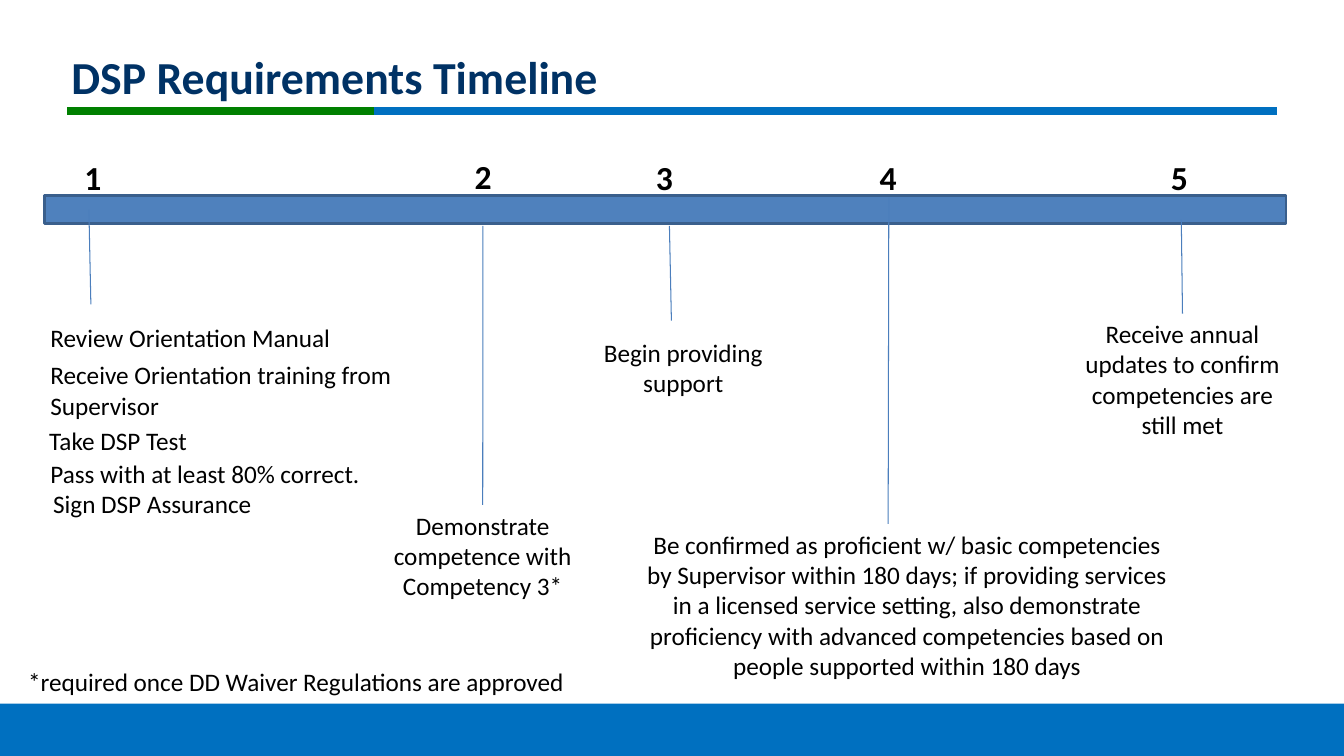
"""Build the DSP Requirements Timeline slide."""
from dataclasses import dataclass

from lxml.etree import SubElement
from pptx import Presentation
from pptx.dml.color import RGBColor
from pptx.enum.shapes import MSO_CONNECTOR, MSO_SHAPE
from pptx.enum.text import MSO_ANCHOR, PP_ALIGN
from pptx.oxml.ns import qn
from pptx.util import Cm, Pt


@dataclass(frozen=True)
class Theme:
    font: str = "Calibri"
    title: str = "003265"
    text: str = "000000"
    paper: str = "FFFFFF"
    blue: str = "0070C0"
    green: str = "008000"
    bar: str = "4F81BD"
    bar_edge: str = "3A5F8C"
    drop: str = "4B7EBC"
    title_size: float = 32.7
    number_size: float = 24
    body_size: float = 18
    rule_width: float = 6
    edge_width: float = 2
    drop_width: float = 0.75


THEME = Theme()
SLIDE_WIDTH, SLIDE_HEIGHT = 33.87, 19.05
FOOTER_HEIGHT = 1.32
LINE_HEIGHT, BOX_PADDING = 0.77, 0.25

TITLE = "DSP Requirements Timeline"
TITLE_BOX = (1.8, 1.22, 25.65, 1.4)
RULE_TOP = 2.79
RULES = [(1.7, 9.8, THEME.green), (9.42, 32.18, THEME.blue)]
BAR_BOX = (1.12, 4.93, 31.29, 0.71)

# (number left, number top, drop start, drop end)
MILESTONES = [
    (1.88, 3.84, (2.24, 5.28), (2.29, 7.67)),
    (11.71, 3.81, (12.17, 5.69), (12.22, 12.78)),
    (16.28, 3.84, (16.87, 5.69), (16.92, 8.08)),
    (21.92, 3.84, (22.4, 4.98), (22.38, 14.3)),
    (29.26, 3.84, (29.77, 5.54), (29.82, 7.92)),
]

LEFT_NOTES = [
    (1.02, 8.0, 7.65, ["Review Orientation Manual"]),
    (1.02, 8.94, 9.35, ["Receive Orientation training from", "Supervisor"]),
    (0.99, 10.59, 4.17, ["Take DSP Test"]),
    (1.02, 11.43, 8.38, ["Pass with at least 80% correct."]),
    (1.09, 12.19, 5.56, ["Sign DSP Assurance"]),
    (0.46, 16.66, 14.2, ["*required once DD Waiver Regulations are approved"]),
]

CENTRED_NOTES = [
    (2, (8.84, 12.73, 6.65, 2.57), THEME.paper, True,
     ["Demonstrate competence with Competency 3*"]),
    (4, (15.9, 13.21, 13.92, 4.11), THEME.paper, False,
     ["Be confirmed as proficient w/ basic competencies",
      "by Supervisor within 180 days; if providing services in a licensed "
      "service setting, also demonstrate proficiency with advanced "
      "competencies based on people supported within 180 days"]),
    (3, (14.45, 8.38, 5.54, 1.8), None, False, ["Begin providing support"]),
    (5, (27.03, 7.9, 5.54, 3.33), None, True,
     ["Receive annual updates to confirm competencies are still met"]),
]


def color(value):
    """Turn a hex string into a colour."""
    return RGBColor.from_string(value)


def add_bar(slide, box, fill, edge=None):
    """Add a filled rectangle with an optional outline."""
    shape = slide.shapes.add_shape(MSO_SHAPE.RECTANGLE, *map(Cm, box))
    shape.shadow.inherit = False
    shape.fill.solid()
    shape.fill.fore_color.rgb = color(fill)
    if edge:
        shape.line.color.rgb = color(edge)
        shape.line.width = Pt(THEME.edge_width)
    else:
        shape.line.fill.background()
    return shape


def add_line(slide, start, end, line_color, width):
    """Add a straight line without a shadow."""
    line = slide.shapes.add_connector(
        MSO_CONNECTOR.STRAIGHT, *map(Cm, start + end))
    line.line.color.rgb = color(line_color)
    line.line.width = Pt(width)
    SubElement(line._element.spPr, qn("a:effectLst"))
    return line


def write(shape, lines, size, text_color=THEME.text, bold=False,
          align=PP_ALIGN.LEFT, wrap=True, margin=None):
    """Fill a shape with one paragraph for each line."""
    frame = shape.text_frame
    frame.word_wrap = wrap
    frame.vertical_anchor = MSO_ANCHOR.TOP
    if margin is not None:
        frame.margin_left = frame.margin_right = Cm(margin)
        frame.margin_top = frame.margin_bottom = Cm(margin)
    for index, line in enumerate(lines):
        paragraph = frame.add_paragraph() if index else frame.paragraphs[0]
        paragraph.alignment = align
        run = paragraph.add_run()
        run.text = line
        run.font.name = THEME.font
        run.font.size = Pt(size)
        run.font.bold = bold
        run.font.color.rgb = color(text_color)


def add_text(slide, box, lines, size, **style):
    """Add a text box and write in it."""
    shape = slide.shapes.add_textbox(*map(Cm, box))
    write(shape, lines, size, **style)
    return shape


def main():
    """Lay out the slide and save it."""
    presentation = Presentation()
    presentation.slide_width = Cm(SLIDE_WIDTH)
    presentation.slide_height = Cm(SLIDE_HEIGHT)
    slide = presentation.slides.add_slide(presentation.slide_layouts[6])

    footer_top = SLIDE_HEIGHT - FOOTER_HEIGHT
    add_bar(slide, (0, footer_top, SLIDE_WIDTH, FOOTER_HEIGHT), THEME.blue)
    for left, right, rule_color in RULES:
        add_line(slide, (left, RULE_TOP), (right, RULE_TOP),
                 rule_color, THEME.rule_width)
    add_text(slide, TITLE_BOX, [TITLE], THEME.title_size,
             text_color=THEME.title, bold=True, margin=0)

    add_bar(slide, BAR_BOX, THEME.bar, THEME.bar_edge)
    drops = {}
    for number, (left, top, start, end) in enumerate(MILESTONES, 1):
        drops[number] = add_line(slide, start, end,
                                 THEME.drop, THEME.drop_width)
        add_text(slide, (left, top, 0.94, 1.27), [str(number)],
                 THEME.number_size, bold=True, wrap=False)

    for number, box, fill, joined, lines in CENTRED_NOTES:
        if fill:
            note = add_bar(slide, box, fill)
            write(note, lines, THEME.body_size, align=PP_ALIGN.CENTER)
        else:
            note = add_text(slide, box, lines, THEME.body_size,
                            align=PP_ALIGN.CENTER)
        if joined:
            drops[number].end_connect(note, 0)

    for left, top, width, lines in LEFT_NOTES:
        height = BOX_PADDING + LINE_HEIGHT * len(lines)
        add_text(slide, (left, top, width, height), lines,
                 THEME.body_size, wrap=False)

    presentation.save("out.pptx")


if __name__ == "__main__":
    main()
